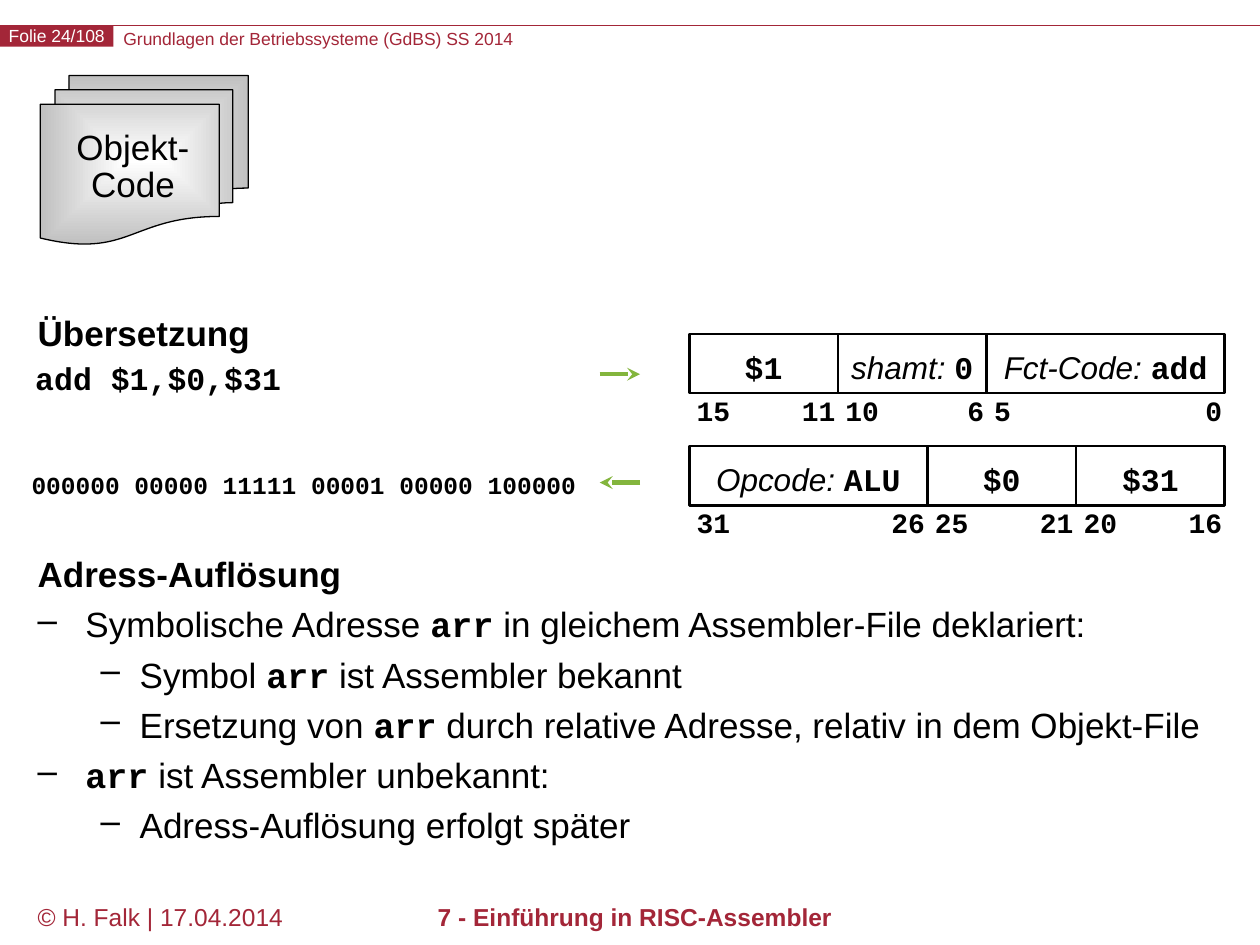
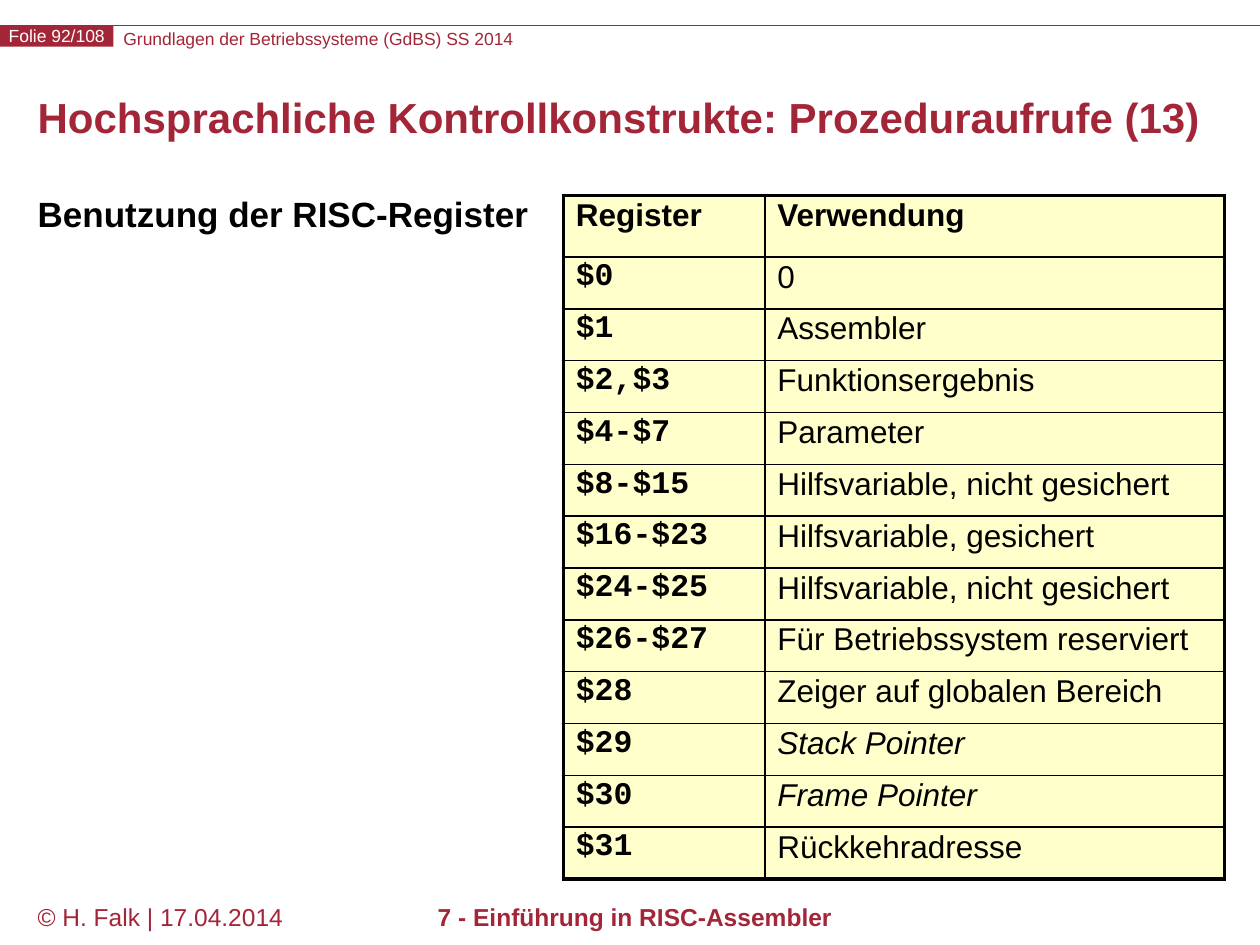
from dataclasses import dataclass

from lxml import etree
from pptx import Presentation
from pptx.dml.color import RGBColor
from pptx.enum.shapes import MSO_CONNECTOR, MSO_SHAPE
from pptx.enum.text import MSO_ANCHOR, PP_ALIGN
from pptx.oxml.ns import qn
from pptx.util import Inches, Pt

RECT, MULTIDOC = MSO_SHAPE.RECTANGLE, MSO_SHAPE.FLOWCHART_MULTIDOCUMENT
STRAIGHT = MSO_CONNECTOR.STRAIGHT
LEFT, CENTER, RIGHT = PP_ALIGN.LEFT, PP_ALIGN.CENTER, PP_ALIGN.RIGHT
TOP, MIDDLE = MSO_ANCHOR.TOP, MSO_ANCHOR.MIDDLE


@dataclass(frozen=True)
class Theme:
    red: RGBColor = RGBColor(0xA3, 0x26, 0x38)
    green: RGBColor = RGBColor(0x83, 0xB5, 0x3D)
    cream: RGBColor = RGBColor(0xFF, 0xFF, 0xCC)
    gray: RGBColor = RGBColor(0xC0, 0xC0, 0xC0)
    black: RGBColor = RGBColor(0, 0, 0)
    white: RGBColor = RGBColor(255, 255, 255)
    sans: str = "Arial"
    mono: str = "Courier New"
    title: int = 24
    body: int = 20
    code: int = 18
    bits: int = 16
    small: int = 14
    header: int = 10
    thin: float = 1
    thick: float = 2.25


T = Theme()
LEVELS = [(0.38, -0.38), (0.81, -0.31)]


def code(text):
    return text, dict(font=T.mono, bold=True)


def italic(text):
    return text, dict(italic=True)


def write(tf, paragraphs, align=LEFT, anchor=TOP, inset=(0, 0, 0, 0), spacing=None, **fmt):
    tf.word_wrap = True
    tf.vertical_anchor = anchor
    tf.margin_left, tf.margin_top, tf.margin_right, tf.margin_bottom = map(Inches, inset)
    for i, runs in enumerate(paragraphs):
        p = tf.paragraphs[0] if i == 0 else tf.add_paragraph()
        p.alignment = align
        if spacing:
            p.line_spacing = Pt(spacing)
        add_runs(p, runs, **fmt)


def add_runs(p, runs, **fmt):
    for run in [runs] if isinstance(runs, str) else runs:
        text, own = (run, {}) if isinstance(run, str) else run
        style = dict(font=T.sans, size=T.body, color=T.black, bold=False, italic=False)
        style.update(fmt)
        style.update(own)
        r = p.add_run()
        r.text = text
        r.font.name = style["font"]
        r.font.size = Pt(style["size"])
        r.font.color.rgb = style["color"]
        r.font.bold = style["bold"]
        r.font.italic = style["italic"]


def add_bullet(p, level):
    pPr = p._p.get_or_add_pPr()
    margin, indent = LEVELS[level]
    pPr.set("marL", str(Inches(margin)))
    pPr.set("indent", str(Inches(indent)))
    etree.SubElement(pPr, qn("a:buChar"), char="–")


def add_border(cell, side, width):
    tcPr = cell._tc.get_or_add_tcPr()
    ln = etree.SubElement(tcPr, qn(f"a:ln{side}"), w=str(Pt(width)))
    fill = etree.SubElement(ln, qn("a:solidFill"))
    etree.SubElement(fill, qn("a:srgbClr"), val=str(T.black))


class Deck:
    PAD = (0.1, 0.05, 0.1, 0.05)

    def __init__(self):
        self.prs = Presentation()
        self.prs.slide_width, self.prs.slide_height = Inches(10), Inches(7.5)
        self.s = None

    def slide(self, number):
        self.s = self.prs.slides.add_slide(self.prs.slide_layouts[6])
        self.line(0, 0.2, 10, 0.2, T.red, 0.75)
        self.text(0.98, 0.22, 6.6, 0.17, ["Grundlagen der Betriebssysteme (GdBS) SS 2014"],
                  size=T.header, color=T.red)
        tag = self.shape(RECT, 0, 0.2, 0.9, 0.17, fill=T.red)
        write(tag.text_frame, [f"Folie {number}/108"], align=CENTER, anchor=MIDDLE,
              size=T.header, color=T.white)
        footer = dict(inset=self.PAD, size=T.small, color=T.red)
        self.text(0.2, 7.11, 2.2, 0.39, ["© H. Falk | 17.04.2014"], **footer)
        self.text(2.01, 7.11, 6.06, 0.39, ["7 - Einführung in RISC-Assembler"],
                  align=CENTER, bold=True, **footer)

    def text(self, x, y, w, h, paragraphs, **fmt):
        tb = self.s.shapes.add_textbox(Inches(x), Inches(y), Inches(w), Inches(h))
        write(tb.text_frame, paragraphs, **fmt)
        return tb.text_frame

    def title(self, text):
        self.text(0.2, 0.6, 9.61, 0.72, [text], anchor=MIDDLE, inset=self.PAD,
                  spacing=24, size=T.title, color=T.red, bold=True)

    def heading(self, y, text):
        self.text(0.2, y, 9.61, 0.42, [text], inset=self.PAD, bold=True)

    def bullets(self, y, h, heading, items):
        paragraphs = [[(heading, dict(bold=True))]] + [runs for _, runs in items]
        tf = self.text(0.2, y, 9.61, h, paragraphs, inset=self.PAD, spacing=28.75)
        for p, (level, _) in zip(tf.paragraphs[1:], items):
            add_bullet(p, level)

    def shape(self, kind, x, y, w, h, fill=None, line=None):
        sp = self.s.shapes.add_shape(kind, Inches(x), Inches(y), Inches(w), Inches(h))
        sp.shadow.inherit = False
        if fill is None:
            sp.fill.background()
        else:
            sp.fill.solid()
            sp.fill.fore_color.rgb = fill
        if line is None:
            sp.line.fill.background()
        else:
            sp.line.color.rgb = T.black
            sp.line.width = Pt(line)
        return sp

    def documents(self, x, y, w, h):
        sp = self.shape(MULTIDOC, x, y, w, h, line=0.75)
        sp.fill.gradient()
        for stop, color in zip(sp.fill.gradient_stops, (T.white, T.gray)):
            stop.color.rgb = color
        grad = sp._element.spPr.find(qn("a:gradFill"))
        grad.remove(grad.find(qn("a:lin")))
        radial = etree.SubElement(grad, qn("a:path"), path="rect")
        etree.SubElement(radial, qn("a:fillToRect"), {side: "50000" for side in "ltrb"})

    def line(self, x1, y1, x2, y2, color, width, arrow=False):
        c = self.s.shapes.add_connector(STRAIGHT, Inches(x1), Inches(y1), Inches(x2), Inches(y2))
        c.line.color.rgb = color
        c.line.width = Pt(width)
        if arrow:
            etree.SubElement(c.line._get_or_add_ln(), qn("a:tailEnd"), type="stealth")
        etree.SubElement(c._element.spPr, qn("a:effectLst"))

    def word_format(self, x, y, fields):
        h, label_w = 0.47, 0.4
        for w, runs, high, low in fields:
            field = self.shape(RECT, x, y, w, h, line=1.5)
            write(field.text_frame, [runs], align=CENTER, anchor=MIDDLE,
                  inset=(0, 0.06, 0, 0), size=T.code)
            label = dict(font=T.mono, size=T.bits, bold=True)
            self.text(x + 0.06, y + h, label_w, 0.27, [high], **label)
            self.text(x + w - label_w - 0.02, y + h, label_w, 0.27, [low],
                      align=RIGHT, **label)
            x += w

    def table(self, x, y, widths, header_h, h, rows):
        frame = self.s.shapes.add_table(len(rows), len(widths), Inches(x), Inches(y),
                                        Inches(sum(widths)), Inches(h))
        table = frame.table
        table.first_row = table.horz_banding = False
        for column, width in zip(table.columns, widths):
            column.width = Inches(width)
        last_row, last_col = len(rows) - 1, len(widths) - 1
        for i, row in enumerate(rows):
            table.rows[i].height = Inches(header_h if i == 0 else (h - header_h) / last_row)
            for j, runs in enumerate(row):
                cell = table.cell(i, j)
                edges = dict(L=j == 0, R=j == last_col, T=i == 0, B=i == last_row)
                for side, outer in edges.items():
                    add_border(cell, side, T.thick if outer else T.thin)
                cell.fill.solid()
                cell.fill.fore_color.rgb = T.cream
                cell.margin_left = cell.margin_right = Inches(0.1)
                cell.margin_top = cell.margin_bottom = Inches(0.02)
                add_runs(cell.text_frame.paragraphs[0], runs, size=T.code, bold=i == 0)


def translation_slide(deck):
    deck.slide(24)
    deck.documents(0.32, 0.6, 1.65, 1.34)
    deck.text(0.5, 1.04, 1.11, 0.64, ["Objekt-", "Code"], align=CENTER, spacing=21)

    deck.heading(2.42, "Übersetzung")
    deck.text(0.28, 2.85, 2.2, 0.3, [[code("add $1,$0,$31")]], size=T.code)
    deck.text(0.25, 3.73, 4.45, 0.24, [[code("000000 00000 11111 00001 00000 100000")]],
              size=T.small)
    deck.line(4.76, 2.97, 5.08, 2.97, T.green, 2.5, arrow=True)
    deck.line(5.08, 3.83, 4.76, 3.83, T.green, 2.5, arrow=True)

    narrow, wide = 1.18, 1.89
    deck.word_format(5.47, 2.65, [
        (narrow, [code("$1")], "15", "11"),
        (narrow, [italic("shamt: "), code("0")], "10", "6"),
        (wide, [italic("Fct-Code: "), code("add")], "5", "0"),
    ])
    deck.word_format(5.47, 3.54, [
        (wide, [italic("Opcode: "), code("ALU")], "31", "26"),
        (narrow, [code("$0")], "25", "21"),
        (narrow, [code("$31")], "20", "16"),
    ])

    arr = code("arr")
    deck.bullets(4.27, 2.6, "Adress-Auflösung", [
        (0, ["Symbolische Adresse ", arr, " in gleichem Assembler-File deklariert:"]),
        (1, ["Symbol ", arr, " ist Assembler bekannt"]),
        (1, ["Ersetzung von ", arr, " durch relative Adresse, relativ in dem Objekt-File"]),
        (0, [arr, " ist Assembler unbekannt:"]),
        (1, "Adress-Auflösung erfolgt später"),
    ])


def register_slide(deck):
    deck.slide(92)
    deck.title("Hochsprachliche Kontrollkonstrukte: Prozeduraufrufe (13)")
    deck.heading(1.48, "Benutzung der RISC-Register")
    registers = [
        ("$0", "0"),
        ("$1", "Assembler"),
        ("$2,$3", "Funktionsergebnis"),
        ("$4-$7", "Parameter"),
        ("$8-$15", "Hilfsvariable, nicht gesichert"),
        ("$16-$23", "Hilfsvariable, gesichert"),
        ("$24-$25", "Hilfsvariable, nicht gesichert"),
        ("$26-$27", "Für Betriebssystem reserviert"),
        ("$28", "Zeiger auf globalen Bereich"),
        ("$29", [italic("Stack Pointer")]),
        ("$30", [italic("Frame Pointer")]),
        ("$31", "Rückkehradresse"),
    ]
    rows = [("Register", "Verwendung")] + [([code(name)], use) for name, use in registers]
    deck.table(4.47, 1.55, (1.6, 3.65), 0.49, 5.43, rows)


def main():
    deck = Deck()
    translation_slide(deck)
    register_slide(deck)
    deck.prs.save("out.pptx")


if __name__ == "__main__":
    main()
